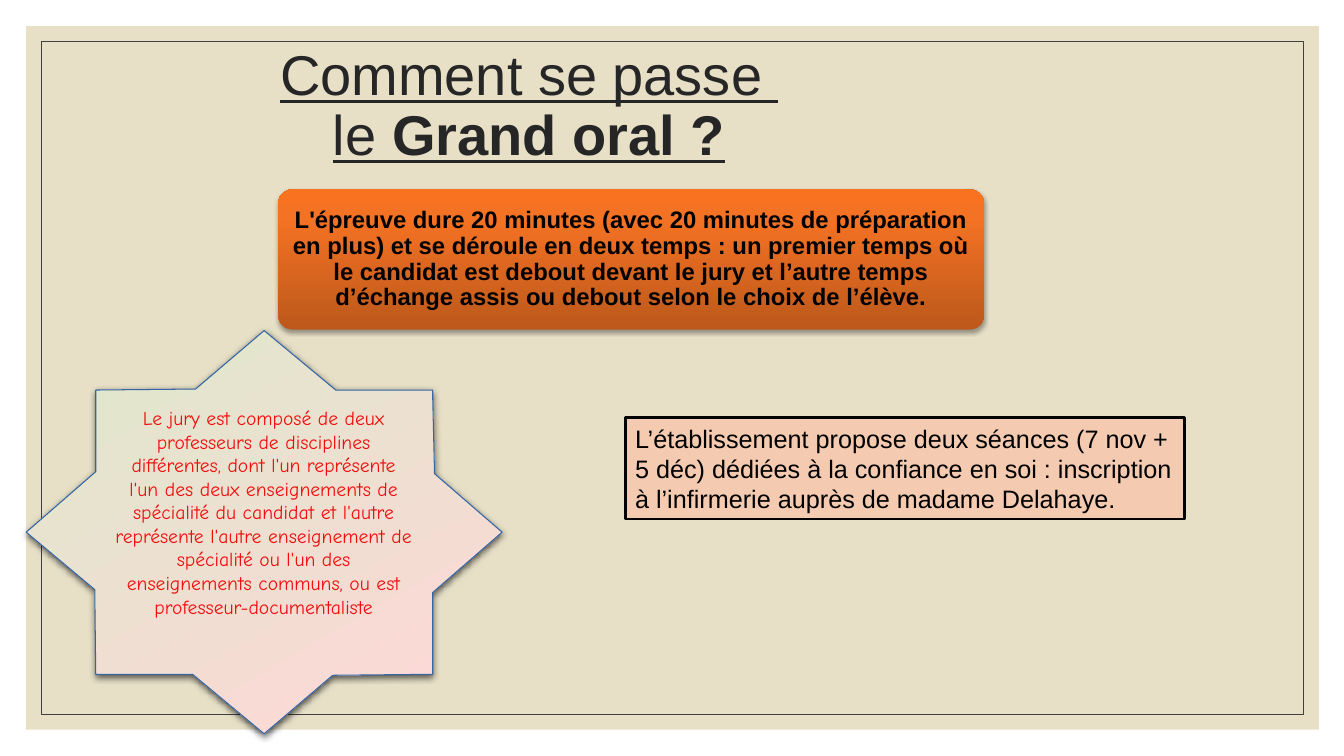
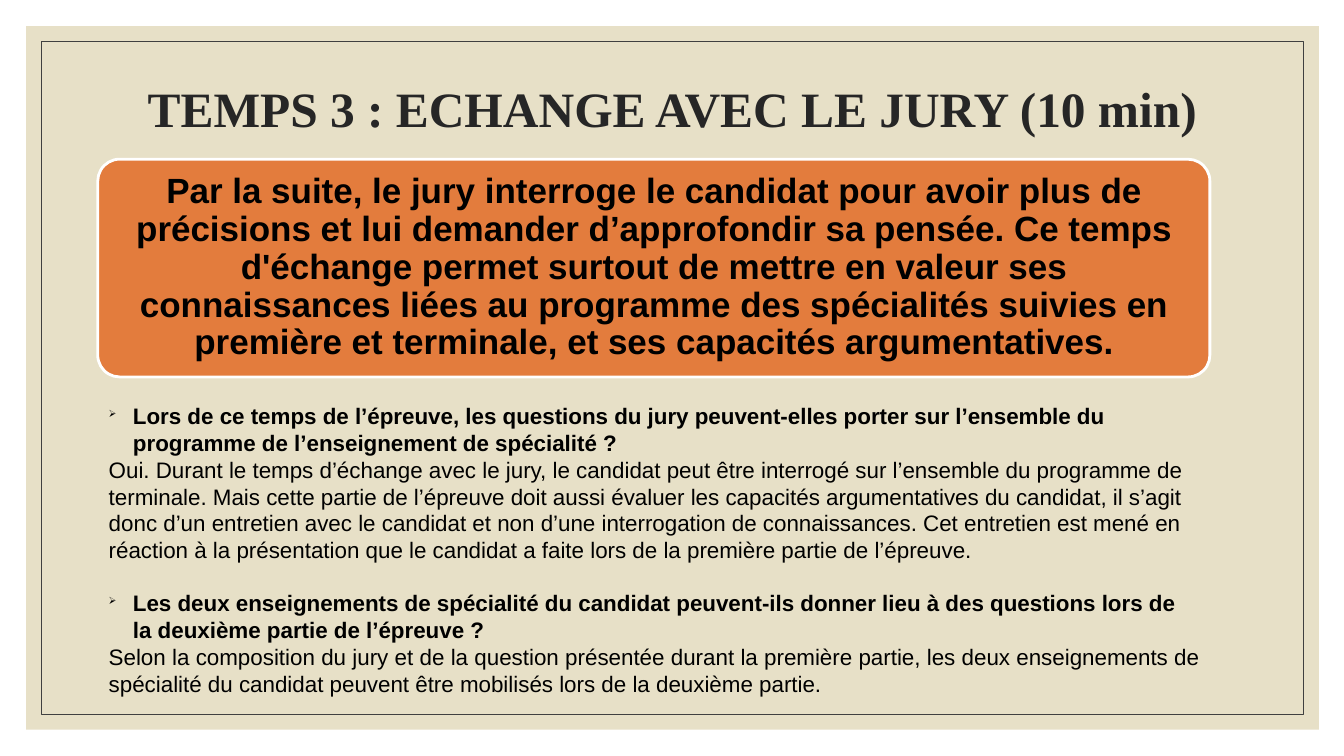
from lxml import etree
from pptx import Presentation
from pptx.dml.color import RGBColor
from pptx.enum.shapes import MSO_SHAPE
from pptx.enum.text import MSO_ANCHOR, MSO_AUTO_SIZE, PP_ALIGN
from pptx.oxml.ns import qn
from pptx.util import Inches, Pt

RECTANGLE, ROUNDED = MSO_SHAPE.RECTANGLE, MSO_SHAPE.ROUNDED_RECTANGLE
LEFT, CENTER, JUSTIFY = PP_ALIGN.LEFT, PP_ALIGN.CENTER, PP_ALIGN.JUSTIFY
TOP, MIDDLE = MSO_ANCHOR.TOP, MSO_ANCHOR.MIDDLE
NO_AUTOFIT = MSO_AUTO_SIZE.NONE

BLACK = RGBColor(0x00, 0x00, 0x00)
WHITE = RGBColor(0xFF, 0xFF, 0xFF)
SAND = RGBColor(0xE7, 0xE0, 0xC7)
FRAME_GREY = RGBColor(0x40, 0x40, 0x40)
TITLE_GREY = RGBColor(0x26, 0x26, 0x26)
ORANGE = RGBColor(0xE3, 0x7C, 0x3D)
PEACH = RGBColor(0xF4, 0xCB, 0xB1)
RED = RGBColor(0xF1, 0x0D, 0x0C)
STAR_BLUE = RGBColor(0x34, 0x65, 0xA4)
ORANGE_STOPS = [(0, RGBColor(0xBC, 0x58, 0x1B)), (80, RGBColor(0xF4, 0x72, 0x23)),
                (100, RGBColor(0xF9, 0x72, 0x1F))]
STAR_STOPS = [(0, RGBColor(0xDD, 0xE8, 0xCB)), (100, RGBColor(0xFF, 0xD7, 0xD7))]

ORAL_TITLE = [("Comment se passe ", False), ("\nle ", False), ("Grand oral ?", True)]
DURATION = (
    "L'épreuve dure 20 minutes (avec 20 minutes de préparation en plus) et se déroule en deux "
    "temps : un premier temps où le candidat est debout devant le jury et l’autre temps "
    "d’échange assis ou debout selon le choix de l’élève.")
JURY = (
    "Le jury est composé de deux professeurs de disciplines différentes, dont l'un représente "
    "l'un des deux enseignements de spécialité du candidat et l'autre représente l'autre "
    "enseignement de spécialité ou l'un des enseignements communs, ou est "
    "professeur-documentaliste")
SESSIONS = (
    "L’établissement propose deux séances (7 nov + 5 déc) dédiées à la confiance en soi : "
    "inscription à l’infirmerie auprès de madame Delahaye.")
STAR_POINTS = [
    (0.26, 5.28), (0.94, 5.85), (0.95, 6.69), (1.91, 6.69), (2.62, 7.28), (3.3, 6.7),
    (4.29, 6.69), (4.29, 5.88), (4.98, 5.28), (4.31, 4.7), (4.29, 3.87), (3.33, 3.87),
    (2.62, 3.28), (1.94, 3.86), (0.95, 3.87), (0.95, 4.68)]

EXCHANGE_TITLE = [("TEMPS 3 : ECHANGE AVEC LE JURY (10 min)", True)]
EXCHANGE = (
    "Par la suite, le jury interroge le candidat pour avoir plus de précisions et lui demander "
    "d’approfondir sa pensée. Ce temps d'échange permet surtout de mettre en valeur ses "
    "connaissances liées au programme des spécialités suivies en première et terminale, et ses "
    "capacités argumentatives.")
# Question, answer, answer alignment
QUESTIONS = [
    ("Lors de ce temps de l’épreuve, les questions du jury peuvent-elles porter sur l’ensemble "
     "du programme de l’enseignement de spécialité ?",
     "Oui. Durant le temps d’échange avec le jury, le candidat peut être interrogé sur "
     "l’ensemble du programme de terminale. Mais cette partie de l’épreuve doit aussi évaluer "
     "les capacités argumentatives du candidat, il s’agit donc d’un entretien avec le candidat "
     "et non d’une interrogation de connaissances. Cet entretien est mené en réaction à la "
     "présentation que le candidat a faite lors de la première partie de l’épreuve.", LEFT),
    ("Les deux enseignements de spécialité du candidat peuvent-ils donner lieu à des questions "
     "lors de la deuxième partie de l’épreuve ?",
     "Selon la composition du jury et de la question présentée durant la première partie, les "
     "deux enseignements de spécialité du candidat peuvent être mobilisés lors de la deuxième "
     "partie.", JUSTIFY),
]


def box(left, top, width, height):
    return Inches(left), Inches(top), Inches(width), Inches(height)


def write(paragraph, runs, size, font="Arial", color=BLACK, bold=False, underline=False,
          align=LEFT, spacing=1.0):
    """Fill a paragraph from a string or from (text, bold) runs; a leading newline breaks."""
    paragraph.alignment = align
    paragraph.line_spacing = spacing
    for text, run_bold in [(runs, bold)] if isinstance(runs, str) else runs:
        if text.startswith("\n"):
            paragraph.add_line_break()
        run = paragraph.add_run()
        run.text = text.lstrip("\n")
        run.font.name, run.font.size = font, Pt(size)
        run.font.bold, run.font.underline = run_bold, underline
        run.font.color.rgb = color


def prepare_frame(shape, anchor=MIDDLE, inset=(0.1, 0.05)):
    """Set wrapping, anchor and insets; return the first paragraph."""
    frame = shape.text_frame
    frame.word_wrap, frame.auto_size = True, NO_AUTOFIT
    frame.vertical_anchor = anchor
    frame.margin_left = frame.margin_right = Inches(inset[0])
    frame.margin_top = frame.margin_bottom = Inches(inset[1])
    return frame.paragraphs[0]


def style(shape, fill=None, line=None, line_width=0):
    shape.shadow.inherit = False
    if fill is None:
        shape.fill.background()
    else:
        shape.fill.solid()
        shape.fill.fore_color.rgb = fill
    if line is None:
        shape.line.fill.background()
    else:
        shape.line.color.rgb = line
        shape.line.width = Pt(line_width)


def add_box(slide, kind, place, **look):
    shape = slide.shapes.add_shape(kind, *box(*place))
    if kind == ROUNDED:
        shape.adjustments[0] = 0.1
    style(shape, **look)
    return shape


def add_color(parent, color, alpha=100):
    node = etree.SubElement(parent, qn("a:srgbClr"), val=str(color))
    if alpha < 100:
        etree.SubElement(node, qn("a:alpha"), val=str(alpha * 1000))


def set_gradient(shape, stops, clockwise_angle):
    shape.fill.gradient()
    shape.fill.gradient_angle = 360 - clockwise_angle
    stop_list = shape.element.spPr.find(qn("a:gradFill")).find(qn("a:gsLst"))
    for stop in list(stop_list):
        stop_list.remove(stop)
    for position, color in stops:
        add_color(etree.SubElement(stop_list, qn("a:gs"), pos=str(position * 1000)), color)


def drop_shadow(shape, alpha, blur, distance):
    effects = shape.element.spPr.find(qn("a:effectLst"))
    shadow = etree.SubElement(effects, qn("a:outerShdw"), blurRad=str(Pt(blur)),
                              dist=str(Pt(distance)), dir="5400000", rotWithShape="0")
    add_color(shadow, BLACK, alpha)


def add_bullet(paragraph):
    properties = paragraph._p.get_or_add_pPr()
    properties.set("marL", str(Inches(0.24)))
    properties.set("indent", str(-Inches(0.24)))
    add_color(etree.SubElement(properties, qn("a:buClr")), BLACK)
    etree.SubElement(properties, qn("a:buSzPct"), val="45000")
    etree.SubElement(properties, qn("a:buChar"), char="➢")


def add_backdrop(slide):
    """Draw the sand panel and its frame, then move them to the layout of the slide."""
    panel = add_box(slide, RECTANGLE, (0.26, 0.26, 12.82, 6.98), fill=SAND)
    frame = add_box(slide, RECTANGLE, (0.41, 0.41, 12.52, 6.68),
                    line=FRAME_GREY, line_width=0.5)
    for index, shape in enumerate((panel, frame)):
        slide.slide_layout.shapes.element.insert(2 + index, shape.element)


def set_title(slide, runs, left, width, **text_format):
    title = slide.shapes.title
    title.left, title.top, title.width, title.height = box(left, 0.43, width, 1.27)
    write(prepare_frame(title), runs, color=TITLE_GREY, align=CENTER, **text_format)


def build_oral(slide):
    set_title(slide, ORAL_TITLE, 0.59, 9.31, size=40, underline=True, spacing=0.9)

    duration = add_box(slide, ROUNDED, (2.76, 1.88, 7, 1.39))
    set_gradient(duration, ORANGE_STOPS, 270)
    drop_shadow(duration, 35, 3.1, 1.8)
    write(prepare_frame(duration, inset=(0.07, 0.07)), DURATION, 17, bold=True,
          align=CENTER, spacing=0.9)

    outline = [(Inches(x), Inches(y)) for x, y in STAR_POINTS]
    builder = slide.shapes.build_freeform(*outline[0])
    builder.add_line_segments(outline[1:], close=True)
    star = builder.convert_to_shape()
    style(star, line=STAR_BLUE)
    set_gradient(star, STAR_STOPS, 60)
    drop_shadow(star, 63, 4.5, 1.5)
    jury = slide.shapes.add_textbox(*box(1.04, 3.98, 3.15, 2.81))
    write(prepare_frame(jury, TOP), JURY, 14, font="Comic Neue", color=RED, align=CENTER)

    sessions = add_box(slide, RECTANGLE, (6.2, 4.14, 5.55, 1.01),
                       fill=PEACH, line=BLACK, line_width=2)
    write(prepare_frame(sessions), SESSIONS, 18)


def build_exchange(slide):
    set_title(slide, EXCHANGE_TITLE, 1.17, 11, size=35.3, font="Times New Roman")

    exchange = add_box(slide, ROUNDED, (0.97, 1.58, 11.03, 2.16),
                       fill=ORANGE, line=WHITE, line_width=2)
    write(prepare_frame(exchange, inset=(0.1, 0.1)), EXCHANGE, 25, bold=True,
          align=CENTER, spacing=0.9)

    answers = slide.shapes.add_textbox(*box(0.98, 3.94, 11.02, 3.06))
    paragraph = prepare_frame(answers, TOP)
    for index, (question, answer, align) in enumerate(QUESTIONS):
        if index:
            paragraph = answers.text_frame.add_paragraph()
            paragraph.space_before = Pt(18.4)
        write(paragraph, question, 16, bold=True)
        add_bullet(paragraph)
        write(answers.text_frame.add_paragraph(), answer, 16, align=align)


def main():
    presentation = Presentation()
    presentation.slide_width, presentation.slide_height = Inches(13.33), Inches(7.5)
    title_only = presentation.slide_layouts[5]
    oral, exchange = [presentation.slides.add_slide(title_only) for _ in range(2)]
    add_backdrop(oral)
    build_oral(oral)
    build_exchange(exchange)
    presentation.save("out.pptx")


if __name__ == "__main__":
    main()
